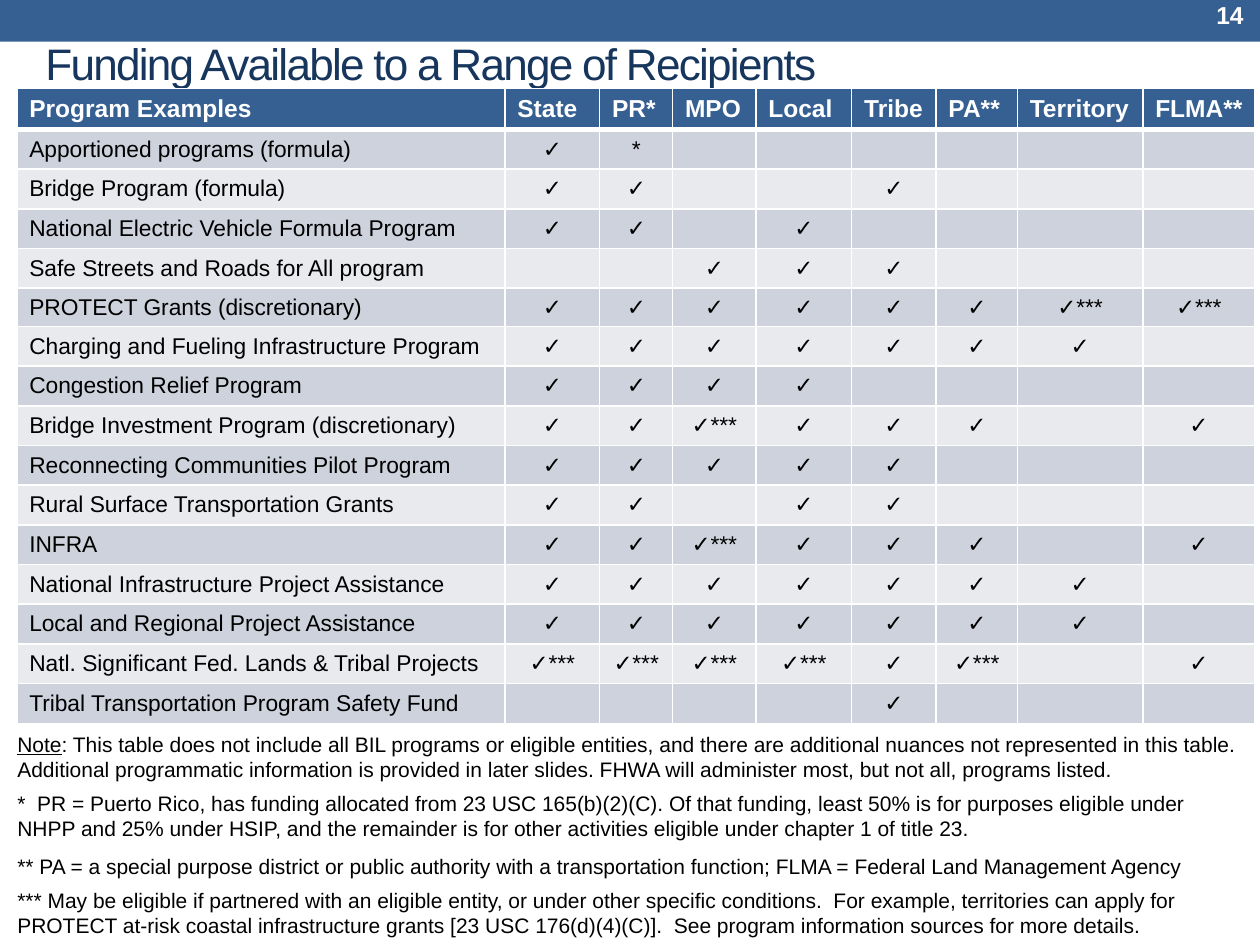
from dataclasses import dataclass

import lxml.etree
import pptx
import pptx.dml.color
import pptx.enum.shapes
import pptx.enum.text
import pptx.oxml.ns
import pptx.util
from pptx.util import Cm

RGBColor = pptx.dml.color.RGBColor
Align = pptx.enum.text.PP_ALIGN
Anchor = pptx.enum.text.MSO_ANCHOR
qn = pptx.oxml.ns.qn

BLUE = RGBColor(0x36, 0x60, 0x92)
NAVY = RGBColor(0x17, 0x36, 0x5D)
WHITE = RGBColor(0xFF, 0xFF, 0xFF)
BLACK = RGBColor(0x00, 0x00, 0x00)
DARK_BAND = RGBColor(0xCE, 0xD2, 0xDC)
LIGHT_BAND = RGBColor(0xE8, 0xEA, 0xEE)
FONT = "Arial"


@dataclass(frozen=True)
class Program:
    name: str
    marks: str


@dataclass(frozen=True)
class Note:
    text: str
    gap: float = 0
    lead: str = ""


@dataclass(frozen=True)
class Column:
    heading: str
    width: float


COLUMNS = [
    Column("Program Examples", 9.84),
    Column("State", 1.91),
    Column("PR*", 1.47),
    Column("MPO", 1.68),
    Column("Local", 1.93),
    Column("Tribe", 1.7),
    Column("PA**", 1.64),
    Column("Territory", 2.53),
    Column("FLMA**", 2.26),
]

PROGRAMS = [
    Program("Apportioned programs (formula)", "✓ * - - - - - -"),
    Program("Bridge Program (formula)", "✓ ✓ - - ✓ - - -"),
    Program("National Electric Vehicle Formula Program", "✓ ✓ - ✓ - - - -"),
    Program("Safe Streets and Roads for All program", "- - ✓ ✓ ✓ - - -"),
    Program("PROTECT Grants (discretionary)", "✓ ✓ ✓ ✓ ✓ ✓ ✓*** ✓***"),
    Program("Charging and Fueling Infrastructure Program", "✓ ✓ ✓ ✓ ✓ ✓ ✓ -"),
    Program("Congestion Relief Program", "✓ ✓ ✓ ✓ - - - -"),
    Program("Bridge Investment Program (discretionary)", "✓ ✓ ✓*** ✓ ✓ ✓ - ✓"),
    Program("Reconnecting Communities Pilot Program", "✓ ✓ ✓ ✓ ✓ - - -"),
    Program("Rural Surface Transportation Grants", "✓ ✓ - ✓ ✓ - - -"),
    Program("INFRA", "✓ ✓ ✓*** ✓ ✓ ✓ - ✓"),
    Program("National Infrastructure Project Assistance", "✓ ✓ ✓ ✓ ✓ ✓ ✓ -"),
    Program("Local and Regional Project Assistance", "✓ ✓ ✓ ✓ ✓ ✓ ✓ -"),
    Program("Natl. Significant Fed. Lands & Tribal Projects",
            "✓*** ✓*** ✓*** ✓*** ✓ ✓*** - ✓"),
    Program("Tribal Transportation Program Safety Fund", "- - - - ✓ - - -"),
]

NOTES = [
    Note(": This table does not include all BIL programs or eligible entities, and there are "
         "additional nuances not represented in this table. Additional programmatic information "
         "is provided in later slides. FHWA will administer most, but not all, programs listed.",
         gap=5, lead="Note"),
    Note("*  PR = Puerto Rico, has funding allocated from 23 USC 165(b)(2)(C). Of that funding, "
         "least 50% is for purposes eligible under NHPP and 25% under HSIP, and the remainder is "
         "for other activities eligible under chapter 1 of title 23.", gap=7.5),
    Note("** PA = a special purpose district or public authority with a transportation function; "
         "FLMA = Federal Land Management Agency", gap=5),
    Note("*** May be eligible if partnered with an eligible entity, or under other specific "
         "conditions.  For example, territories can apply for PROTECT at-risk coastal "
         "infrastructure grants [23 USC 176(d)(4)(C)].  See program information sources for "
         "more details."),
]


def write(para, text: str, *, size: float, color: RGBColor = BLACK, bold: bool = False,
          underline: bool = False, align=Align.LEFT, spacing: int = 0) -> None:
    para.alignment = align
    span = para.add_run()
    span.text = text
    span.font.name = FONT
    span.font.size = pptx.util.Pt(size)
    span.font.bold = bold
    span.font.underline = underline
    span.font.color.rgb = color
    if spacing:
        span.font._element.set("spc", str(spacing))


def add_border(cell, side: str, points: float) -> None:
    properties = cell._tc.get_or_add_tcPr()
    line = lxml.etree.SubElement(properties, qn(f"a:{side}"), w=str(pptx.util.Pt(points)))
    fill = lxml.etree.SubElement(line, qn("a:solidFill"))
    lxml.etree.SubElement(fill, qn("a:srgbClr"), val=str(WHITE))


def fill_cell(cell, text: str, *, fill: RGBColor, size: float, top: float = 1,
              bottom: float = 1, **style) -> None:
    cell.margin_left = Cm(0.25)
    cell.margin_right = Cm(0.1 if style.get("bold") else 0.25)
    cell.margin_top = cell.margin_bottom = Cm(0.12)
    cell.vertical_anchor = Anchor.MIDDLE
    for side, points in (("lnL", 1), ("lnR", 1), ("lnT", top), ("lnB", bottom)):
        add_border(cell, side, points)
    cell.fill.solid()
    cell.fill.fore_color.rgb = fill
    para = cell.text_frame.paragraphs[0]
    if text:
        write(para, text, size=size, **style)
    else:
        lxml.etree.SubElement(para._p, qn("a:endParaRPr"), sz=str(size * 100))


def add_program_table(page) -> None:
    width = sum(column.width for column in COLUMNS)
    frame = page.shapes.add_table(len(PROGRAMS) + 1, len(COLUMNS),
                                  Cm(0.34), Cm(1.78), Cm(width), Cm(12.38))
    table = frame.table
    table.rows[0].height = Cm(0.83)
    for index, column in enumerate(COLUMNS):
        table.columns[index].width = Cm(column.width)
        fill_cell(table.cell(0, index), column.heading, fill=BLUE, size=14,
                  bottom=3, color=WHITE, bold=True)
    for row, program in enumerate(PROGRAMS, start=1):
        table.rows[row].height = Cm(0.77)
        band = DARK_BAND if row % 2 else LIGHT_BAND
        top = 3 if row == 1 else 1
        fill_cell(table.cell(row, 0), program.name, fill=band, size=13, top=top)
        for index, mark in enumerate(program.marks.split(), start=1):
            fill_cell(table.cell(row, index), mark.strip("-"), fill=band, size=13,
                      top=top, align=Align.CENTER)


def add_banner(page, width: int) -> None:
    banner = page.shapes.add_shape(pptx.enum.shapes.MSO_SHAPE.RECTANGLE,
                                   0, Cm(-0.18), width, Cm(1.02))
    banner.shadow.inherit = False
    banner.fill.solid()
    banner.fill.fore_color.rgb = BLUE
    banner.line.fill.background()


def add_title(page) -> None:
    title = page.shapes.title
    title.left, title.top, title.width, title.height = Cm(0.66), Cm(0.61), Cm(24.74), Cm(1.3)
    title.text_frame.vertical_anchor = Anchor.MIDDLE
    write(title.text_frame.paragraphs[0], "Funding Available to a Range of Recipients",
          size=25.2, color=NAVY, spacing=-100)


def add_notes(page) -> None:
    box = page.shapes.add_textbox(Cm(0.1), Cm(14.63), Cm(25.3), Cm(4.42))
    box.text_frame.word_wrap = True
    for index, note in enumerate(NOTES):
        para = box.text_frame.add_paragraph() if index else box.text_frame.paragraphs[0]
        para.line_spacing = pptx.util.Pt(14.3)
        para.space_after = pptx.util.Pt(note.gap)
        if note.lead:
            write(para, note.lead, size=12, underline=True)
        write(para, note.text, size=12)


def add_page_number(page) -> None:
    box = page.shapes.add_textbox(Cm(22.35), Cm(-0.15), Cm(2.97), Cm(0.91))
    box.text_frame.word_wrap = True
    box.text_frame.vertical_anchor = Anchor.MIDDLE
    write(box.text_frame.paragraphs[0], "14", size=14, color=WHITE, bold=True,
          align=Align.RIGHT)


def main() -> None:
    deck = pptx.Presentation()
    deck.slide_width, deck.slide_height = Cm(25.4), Cm(19.05)
    page = deck.slides.add_slide(deck.slide_layouts[5])
    add_banner(page, deck.slide_width)
    add_title(page)
    add_program_table(page)
    add_notes(page)
    add_page_number(page)
    deck.save("out.pptx")


if __name__ == "__main__":
    main()
